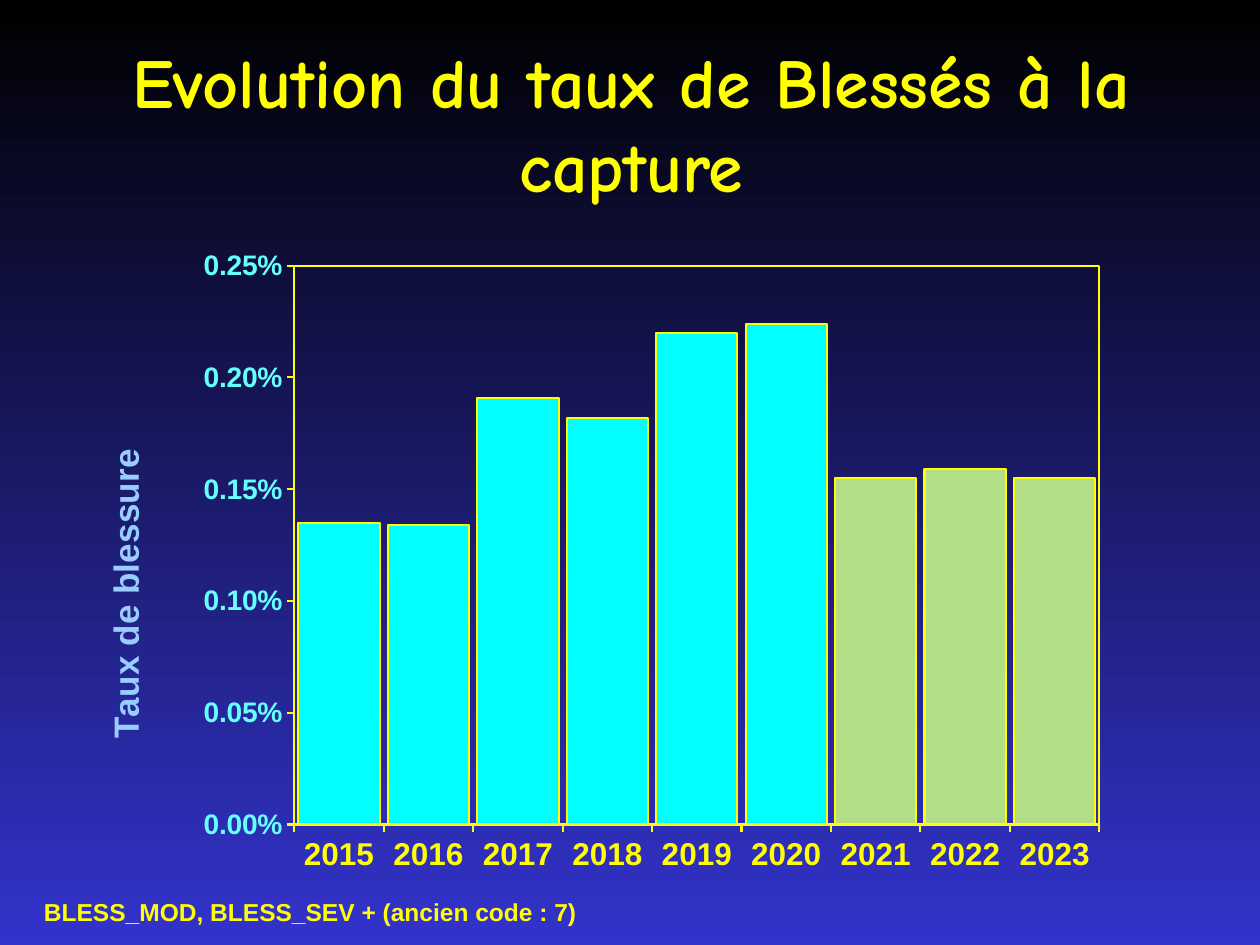
from lxml.etree import SubElement
from pptx import Presentation
from pptx.chart.data import CategoryChartData
from pptx.dml.color import RGBColor
from pptx.enum.chart import XL_CHART_TYPE, XL_TICK_MARK
from pptx.enum.text import PP_ALIGN
from pptx.oxml import parse_xml
from pptx.oxml.ns import nsdecls, qn
from pptx.util import Inches, Pt

YELLOW, CYAN, GREEN = "FFFF00", "00FFFF", "B4DE86"


def style(font, size, color, name="Arial"):
    font.name, font.size, font.bold = name, Pt(size), True
    font.color.rgb = RGBColor.from_string(color)


def place(parent, index, **values):
    """Give a chart part a manual layout, as fractions of the chart."""
    for old in parent.findall(qn("c:layout")):
        parent.remove(old)
    layout = parse_xml(f"<c:layout {nsdecls('c')}><c:manualLayout/></c:layout>")
    for tag, value in values.items():
        SubElement(layout[0], qn(f"c:{tag}")).set("val", str(value))
    parent.insert(index, layout)


deck = Presentation()
deck.slide_width, deck.slide_height = Inches(10), Inches(7.5)
page = deck.slides.add_slide(deck.slide_layouts[6])

background = page.background.fill
background.gradient()
background.gradient_angle = 270
for stop, color in zip(background.gradient_stops, ("000000", "3333CC")):
    stop.color.rgb = RGBColor.from_string(color)

# Title with a soft dark shadow
title = page.shapes.add_textbox(Inches(0.17), Inches(0.26), Inches(9.68), Inches(1.14))
title.text_frame.word_wrap = True
title.text_frame.text = "Evolution du taux de Blessés à la capture"
paragraph = title.text_frame.paragraphs[0]
paragraph.alignment = PP_ALIGN.CENTER
span = paragraph.runs[0]
style(span.font, 40, YELLOW, "Comic Neue")
span.font._element.find(qn("a:solidFill")).addnext(parse_xml(
    f'<a:effectLst {nsdecls("a")}><a:outerShdw blurRad="38100" dist="38100" dir="2700000">'
    '<a:srgbClr val="000000"/></a:outerShdw></a:effectLst>'))

# Injury rate chart
data = CategoryChartData(number_format="0.00%")
data.categories = [str(year) for year in range(2015, 2024)]
data.add_series("Series 1", (0.00135, 0.00134, 0.00191, 0.00182, 0.0022,
                             0.00224, 0.00155, 0.00159, 0.00155))
chart = page.shapes.add_chart(XL_CHART_TYPE.COLUMN_CLUSTERED, Inches(0.59), Inches(1.94),
                              Inches(8.95), Inches(5.43), data).chart
chart.has_legend = chart.has_title = False
chart.font.name, chart.font.size = "Arial", Pt(11.5)

plot = chart.plots[0]
plot.gap_width, plot.vary_by_categories = 10, False
bars = plot.series[0]
for index in range(9):
    bar = bars.points[index].format
    bar.fill.solid()
    bar.fill.fore_color.rgb = RGBColor.from_string(GREEN if index >= 6 else CYAN)
    bar.line.color.rgb = RGBColor.from_string(YELLOW)
    bar.line.width = Pt(1.15)

years, rates = chart.category_axis, chart.value_axis
for axis, size, color in ((years, 18, YELLOW), (rates, 16.1, "66FFFF")):
    style(axis.tick_labels.font, size, color)
    axis.has_major_gridlines = False
    axis.major_tick_mark = XL_TICK_MARK.OUTSIDE
    axis.format.line.color.rgb = RGBColor.from_string(YELLOW)
    axis.format.line.width = Pt(1.15)
rates.minimum_scale, rates.maximum_scale, rates.major_unit = 0, 0.0025, 0.0005
rates.tick_labels.number_format = "0.00%"
rates.tick_labels.number_format_is_linked = False

rate_title = rates.axis_title
rate_title.text_frame.text = "Taux de blessure"
style(rate_title.text_frame.paragraphs[0].runs[0].font, 20, "99CCFF")
rate_title.text_frame._txBody.find(qn("a:bodyPr")).set("rot", "-5400000")
place(rate_title._element, 1, xMode="edge", yMode="edge", x=0.02, y=0.29)

# Plot area with a yellow frame
plot_area = chart._chartSpace.chart.plotArea
place(plot_area, 0, layoutTarget="inner", xMode="edge", yMode="edge",
      x=0.195, y=0.031, w=0.714, h=0.817)
plot_area.append(parse_xml(
    f'<c:spPr {nsdecls("c", "a")}><a:noFill/><a:ln w="{Pt(1.15)}"><a:solidFill>'
    f'<a:srgbClr val="{YELLOW}"/></a:solidFill></a:ln></c:spPr>'))

# Footnote
note = page.shapes.add_textbox(Inches(0.25), Inches(7.07), Inches(4.45), Inches(0.34))
note.text_frame.word_wrap = False
note.text_frame.text = "BLESS_MOD, BLESS_SEV + (ancien code : 7)"
style(note.text_frame.paragraphs[0].runs[0].font, 14, YELLOW)

deck.save("out.pptx")
